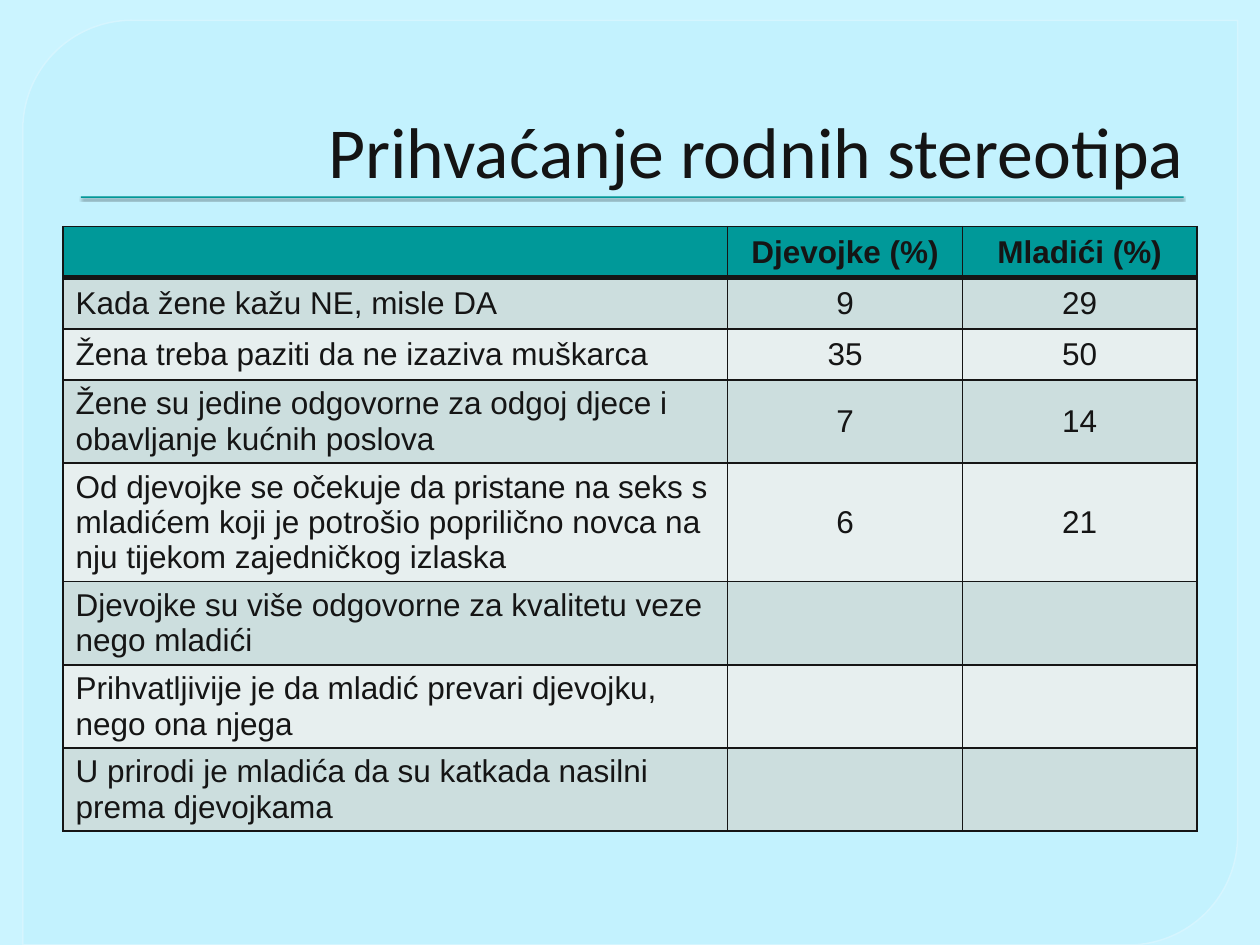
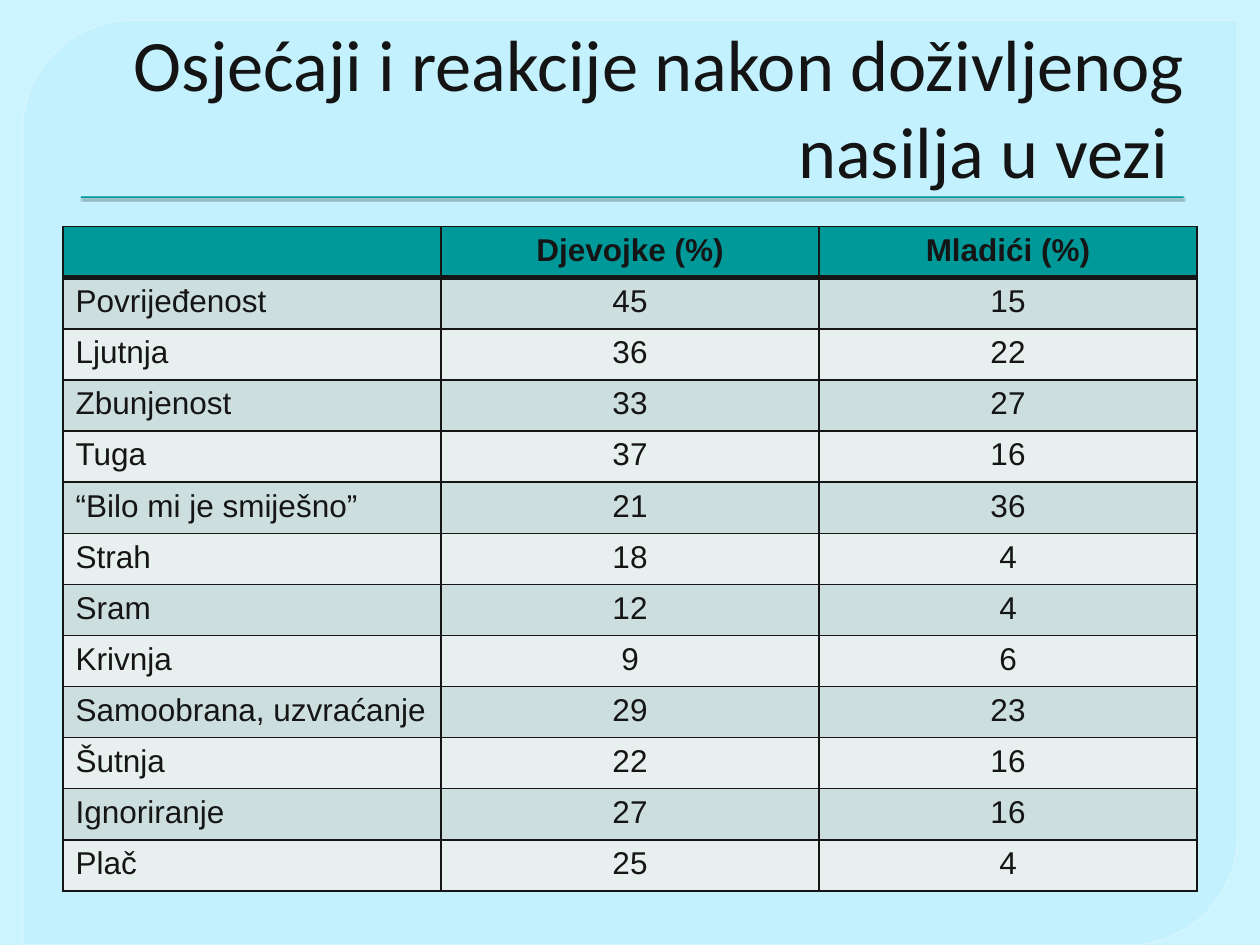
import pptx
import pptx.dml.color
import pptx.enum.shapes
import pptx.enum.text
import pptx.oxml
import pptx.oxml.ns
import pptx.util

Cm = pptx.util.Cm
Align = pptx.enum.text.PP_ALIGN
Anchor = pptx.enum.text.MSO_ANCHOR
Preset = pptx.enum.shapes.MSO_SHAPE

COLORS = {
    "background": "CBF4FF", "panel": "C0F1FE", "panel_line": "D8F6FF",
    "teal": "009999", "title": "141414", "ink": "151515",
    "odd_row": "CCDEDE", "even_row": "E7EFEF", "shadow": "000000",
}

# Boxes: left, top, width, height in centimetres
PANEL_BOX = (0.46, 0.41, 24.49, 18.64)
RULE_BOX = (1.63, 3.96, 22.23, 0.03)
TITLE_BOX = (1.27, 0.71, 22.86, 3.18)
TABLE_BOX = (1.27, 4.57, 22.86)
ROW_HEIGHT = 1.03

HEADER = ("", "Djevojke (%)", "Mladići (%)")
STEREOTYPES = [
    ("Kada žene kažu NE, misle DA", "9", "29"),
    ("Žena treba paziti da ne izaziva muškarca", "35", "50"),
    ("Žene su jedine odgovorne za odgoj djece i obavljanje kućnih poslova", "7", "14"),
    ("Od djevojke se očekuje da pristane na seks s mladićem koji je potrošio "
     "poprilično novca na nju tijekom zajedničkog izlaska", "6", "21"),
    ("Djevojke su više odgovorne za kvalitetu veze nego mladići", "", ""),
    ("Prihvatljivije je da mladić prevari djevojku, nego ona njega", "", ""),
    ("U prirodi je mladića da su katkada nasilni prema djevojkama", "", ""),
]
REACTIONS = [
    ("Povrijeđenost", "45", "15"),
    ("Ljutnja", "36", "22"),
    ("Zbunjenost", "33", "27"),
    ("Tuga", "37", "16"),
    ("“Bilo mi je smiješno”", "21", "36"),
    ("Strah", "18", "4"),
    ("Sram", "12", "4"),
    ("Krivnja", "9", "6"),
    ("Samoobrana, uzvraćanje", "29", "23"),
    ("Šutnja", "22", "16"),
    ("Ignoriranje", "27", "16"),
    ("Plač", "25", "4"),
]


def color(name):
    return pptx.dml.color.RGBColor.from_string(COLORS[name])


def parse_xml(xml):
    return pptx.oxml.parse_xml(xml.replace(">", f" {pptx.oxml.ns.nsdecls('a')}>", 1))


def write_text(text_frame, text, font="Arial", size=18, ink="ink", bold=False,
               align=Align.LEFT):
    paragraph = text_frame.paragraphs[0]
    paragraph.alignment = align
    run = paragraph.add_run()
    run.text = text
    run.font.name = font
    run.font.size = pptx.util.Pt(size)
    run.font.bold = bold
    run.font.color.rgb = color(ink)


def set_alpha(fill, percent):
    """Make a solid fill partly transparent."""
    solid = fill._xPr.find(pptx.oxml.ns.qn("a:solidFill"))
    solid[0].append(parse_xml(f'<a:alpha val="{percent * 1000}"></a:alpha>'))


def add_backdrop(slide):
    """Place the rounded panel and the title rule behind the title."""
    panel = slide.shapes.add_shape(Preset.ROUND_2_DIAG_RECTANGLE, *map(Cm, PANEL_BOX))
    panel.adjustments[0] = 0.118
    panel.adjustments[1] = 0
    panel.shadow.inherit = False
    panel.fill.solid()
    panel.fill.fore_color.rgb = color("panel")
    set_alpha(panel.fill, 65)
    panel.line.width = pptx.util.Pt(0.87)
    panel.line.color.rgb = color("panel_line")
    set_alpha(panel.line.fill, 88)

    rule = slide.shapes.add_shape(Preset.RECTANGLE, *map(Cm, RULE_BOX))
    rule.fill.solid()
    rule.fill.fore_color.rgb = color("teal")
    rule.line.fill.background()
    rule._element.spPr.append(parse_xml(
        '<a:effectLst><a:outerShdw blurRad="12700" dist="12700" dir="5400000">'
        f'<a:srgbClr val="{COLORS["shadow"]}"><a:alpha val="75000"/></a:srgbClr>'
        '</a:outerShdw></a:effectLst>'))

    for shape in (panel, rule):
        slide.shapes.title._element.addprevious(shape._element)


def place_title(slide, text, size):
    title = slide.shapes.title
    title.left, title.top, title.width, title.height = map(Cm, TITLE_BOX)
    frame = title.text_frame
    frame.word_wrap = True
    frame.auto_size = pptx.enum.text.MSO_AUTO_SIZE.NONE
    frame.vertical_anchor = Anchor.BOTTOM
    frame.margin_bottom = 0
    write_text(frame, text, font="Calibri", size=size, ink="title", align=Align.RIGHT)


def set_borders(cell, row_index):
    """Thin lines all round, with a heavy one under the header row."""
    widths = {"L": 1, "R": 1, "T": 3 if row_index == 1 else 1,
              "B": 3 if row_index == 0 else 1}
    properties = cell._tc.get_or_add_tcPr()
    for side, points in widths.items():
        properties.append(parse_xml(
            f'<a:ln{side} w="{points * 12700}"><a:solidFill>'
            f'<a:srgbClr val="{COLORS["ink"]}"/></a:solidFill></a:ln{side}>'))


def add_percentage_table(slide, box, rows, column_widths, anchor):
    left, top, width = box
    lines = [HEADER, *rows]
    frame = slide.shapes.add_table(len(lines), len(HEADER), Cm(left), Cm(top),
                                   Cm(width), Cm(ROW_HEIGHT * len(lines)))
    table = frame.table
    for column, column_width in zip(table.columns, column_widths):
        column.width = Cm(column_width)
    for row_index, line in enumerate(lines):
        table.rows[row_index].height = Cm(ROW_HEIGHT)
        is_header = row_index == 0
        fill = "teal" if is_header else ("even_row", "odd_row")[row_index % 2]
        for column_index, text in enumerate(line):
            cell = table.cell(row_index, column_index)
            set_borders(cell, row_index)
            cell.fill.solid()
            cell.fill.fore_color.rgb = color(fill)
            cell.vertical_anchor = anchor
            if text:
                write_text(cell.text_frame, text, bold=is_header,
                           align=Align.CENTER if column_index else Align.LEFT)


def add_table_slide(presentation, title, title_size, rows, column_widths, anchor):
    slide = presentation.slides.add_slide(presentation.slide_layouts[5])
    add_backdrop(slide)
    place_title(slide, title, title_size)
    add_percentage_table(slide, TABLE_BOX, rows, column_widths, anchor)


def main():
    presentation = pptx.Presentation()
    presentation.slide_width = Cm(25.4)
    presentation.slide_height = Cm(19.05)
    background = presentation.slide_master.background.fill
    background.solid()
    background.fore_color.rgb = color("background")

    add_table_slide(presentation, "Prihvaćanje rodnih stereotipa", 41,
                    STEREOTYPES, (13.4, 4.73, 4.73), Anchor.MIDDLE)
    add_table_slide(presentation, "Osjećaji i reakcije nakon doživljenog nasilja u vezi ",
                    41.4, REACTIONS, (7.62, 7.62, 7.62), Anchor.TOP)
    presentation.save("out.pptx")


if __name__ == "__main__":
    main()
